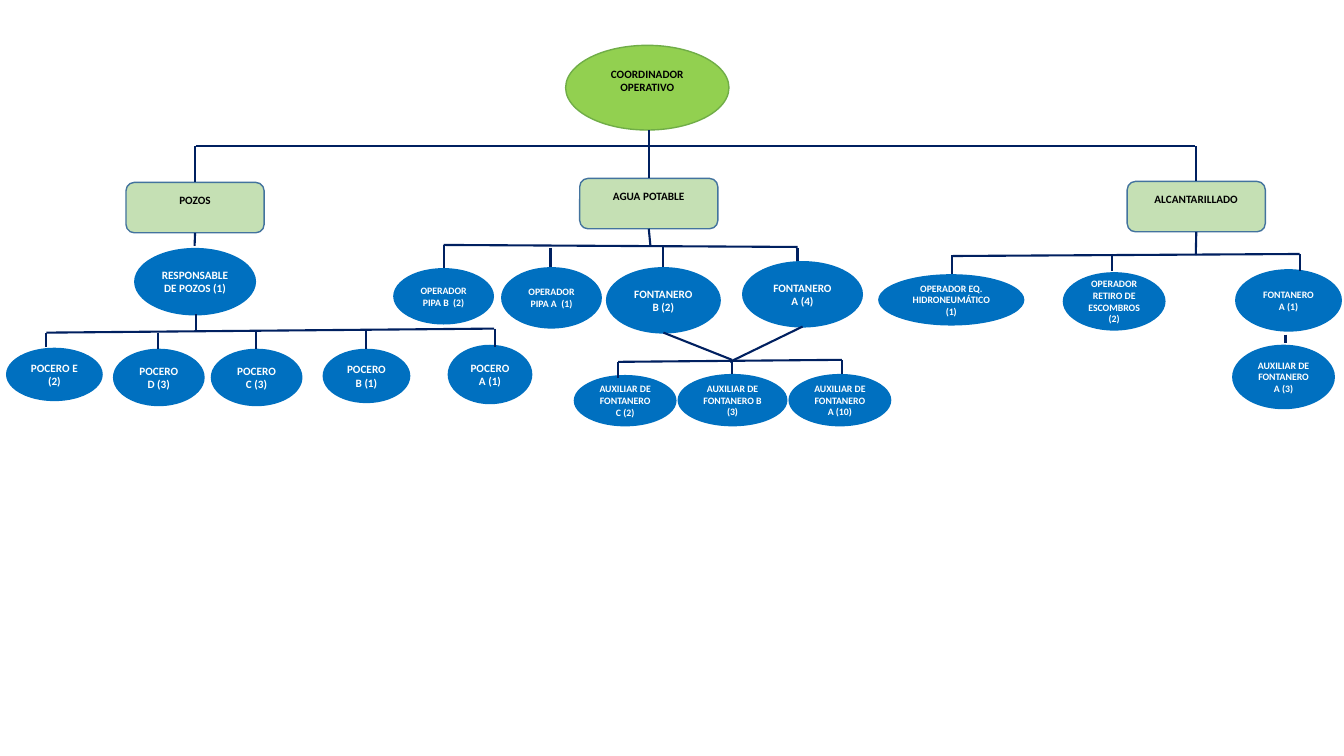
from pptx import Presentation
from pptx.dml.color import RGBColor
from pptx.enum.shapes import MSO_CONNECTOR, MSO_SHAPE
from pptx.enum.text import MSO_ANCHOR, PP_ALIGN
from pptx.oxml.ns import qn
from pptx.util import Inches, Pt
from lxml import etree

STRAIGHT = MSO_CONNECTOR.STRAIGHT
OVAL, ROUNDED = MSO_SHAPE.OVAL, MSO_SHAPE.ROUNDED_RECTANGLE
MIDDLE, CENTER = MSO_ANCHOR.MIDDLE, PP_ALIGN.CENTER
TOP, BOTTOM = 0, 2

THEME = {
    "font": "Calibri",
    "normal": Pt(8),
    "small": Pt(7),
    "dark": RGBColor.from_string("000000"),
    "light": RGBColor.from_string("FFFFFF"),
    "job": RGBColor.from_string("0070C0"),
    "area": RGBColor.from_string("C5E0B4"),
    "area_edge": RGBColor.from_string("43739E"),
    "chief": RGBColor.from_string("92D050"),
    "chief_edge": RGBColor.from_string("70AD47"),
    "link": RGBColor.from_string("002060"),
}

prs = Presentation()
prs.slide_width, prs.slide_height = Inches(13.33), Inches(7.5)
slide = prs.slides.add_slide(prs.slide_layouts[6])


def add_node(kind, lines, box, fill, color, size, edge=None, bottom=0.05):
    node = slide.shapes.add_shape(kind, *[Inches(v) for v in box])
    node.shadow.inherit = False
    node.fill.solid()
    node.fill.fore_color.rgb = THEME[fill]
    if edge:
        node.line.color.rgb = THEME[edge]
        node.line.width = Pt(1)
    else:
        node.line.fill.background()
    frame = node.text_frame
    frame.word_wrap = True
    frame.vertical_anchor = MIDDLE
    frame.margin_left = frame.margin_right = Inches(0.09)
    frame.margin_bottom = Inches(bottom)
    for i, line in enumerate(lines):
        paragraph = frame.paragraphs[0] if i == 0 else frame.add_paragraph()
        paragraph.text = line
        paragraph.alignment = CENTER
        paragraph.font.name = THEME["font"]
        paragraph.font.size = THEME[size]
        paragraph.font.bold = True
        paragraph.font.color.rgb = THEME[color]
    return node


def add_link(x1, y1, x2, y2):
    link = slide.shapes.add_connector(STRAIGHT, *[Inches(v) for v in (x1, y1, x2, y2)])
    link.line.color.rgb = THEME["link"]
    link.line.width = Pt(1.5)
    etree.SubElement(link._element.spPr, qn("a:effectLst"))
    return link


add_node(OVAL, ["COORDINADOR", "OPERATIVO"], (5.61, 0.45, 1.62, 0.84),
         "chief", "dark", "normal", "chief_edge", 0.19)

jobs = [
    ("RESPONSABLE DE POZOS (1)", "normal", (1.33, 2.46, 1.21, 0.67)),
    ("POCERO E (2)", "normal", (0.06, 3.45, 0.96, 0.53)),
    ("POCERO D (3)", "normal", (1.12, 3.46, 0.91, 0.57)),
    ("POCERO C (3)", "normal", (2.09, 3.46, 0.91, 0.57)),
    ("POCERO B (1)", "normal", (3.2, 3.46, 0.87, 0.54)),
    ("POCERO A (1)", "normal", (4.44, 3.42, 0.84, 0.59)),
    ("OPERADOR PIPA B  (2)", "small", (3.9, 2.66, 1, 0.56)),
    ("OPERADOR PIPA A  (1)", "small", (4.97, 2.65, 1, 0.61)),
    ("FONTANERO B (2)", "normal", (6.01, 2.65, 1.14, 0.66)),
    ("FONTANERO A (4)", "normal", (7.36, 2.59, 1.2, 0.66)),
    ("AUXILIAR DE FONTANERO C (2)", "small", (5.69, 3.72, 1.02, 0.51)),
    ("AUXILIAR DE FONTANERO B (3)", "small", (6.72, 3.71, 1.09, 0.52)),
    ("AUXILIAR DE FONTANERO A (10)", "small", (7.82, 3.71, 1.02, 0.52)),
    ("OPERADOR EQ. HIDRONEUMÁTICO (1)", "small", (8.71, 2.72, 1.45, 0.51)),
    ("OPERADOR RETIRO DE ESCOMBROS (2)", "small", (10.54, 2.7, 1.02, 0.58)),
    ("FONTANERO A (1)", "small", (12.25, 2.67, 1.06, 0.62)),
    ("AUXILIAR DE FONTANERO A (3)", "small", (12.22, 3.42, 1.02, 0.64)),
]
for title, size, box in jobs:
    add_node(OVAL, [title], box, "job", "light", size)

areas = [
    ("POZOS", 1.25, 1.81, 1.45, (1.93, 2.44)),
    ("AGUA POTABLE", 5.75, 1.77, 1.29, (6.45, 2.43)),
    ("ALCANTARILLADO", 11.18, 1.8, 1.45, (11.86, 2.53)),
]
for title, left, top, link_top, stem_end in areas:
    area = add_node(ROUNDED, [title], (left, top, 1.37, 0.5),
                    "area", "dark", "normal", "area_edge", 0.19)
    middle = left + 1.37 / 2
    add_link(middle, link_top, middle, top).end_connect(area, TOP)
    add_link(middle, top + 0.5, *stem_end).begin_connect(area, BOTTOM)

buses = [
    (1.94, 1.45, 11.85, 1.45),
    (0.46, 3.3, 4.9, 3.26),
    (4.4, 2.43, 7.91, 2.45),
    (6.13, 3.59, 8.35, 3.57),
    (9.45, 2.54, 12.89, 2.52),
]
for bus in buses:
    add_link(*bus)

drops = [
    (0.46, 3.3, 3.44), (1.57, 3.3, 3.46), (2.54, 3.29, 3.46),
    (3.63, 3.28, 3.46), (4.91, 3.26, 3.44), (1.94, 3.12, 3.28),
    (4.4, 2.43, 2.66), (5.46, 2.46, 2.65), (6.58, 2.45, 2.65), (7.91, 2.46, 2.59),
    (6.13, 3.59, 3.75), (7.26, 3.59, 3.71), (8.35, 3.57, 3.71),
    (9.44, 2.53, 2.72), (11.03, 2.52, 2.69), (12.89, 2.52, 2.69), (12.75, 3.32, 3.4),
]
for x, start, end in drops:
    add_link(x, start, x, end)

add_link(6.58, 3.3, 7.26, 3.57)
add_link(7.96, 3.24, 7.24, 3.59)

prs.save("out.pptx")
